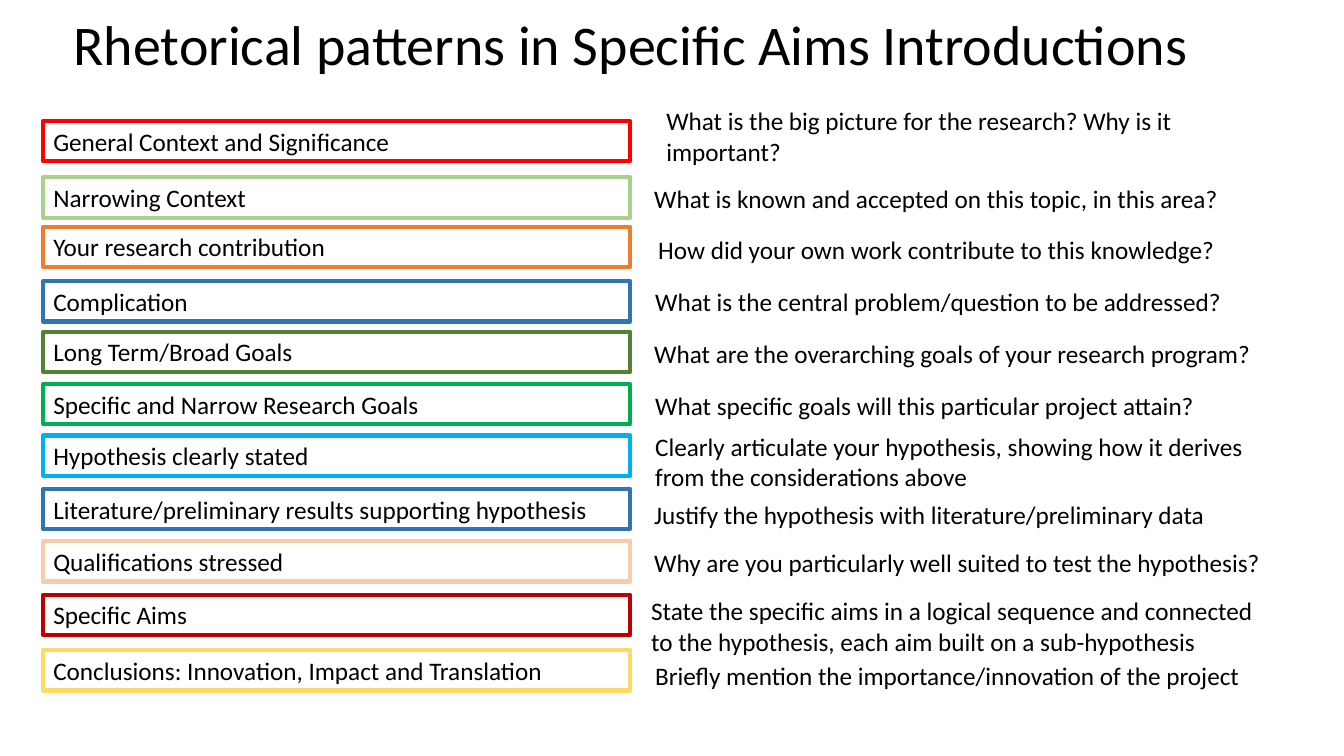
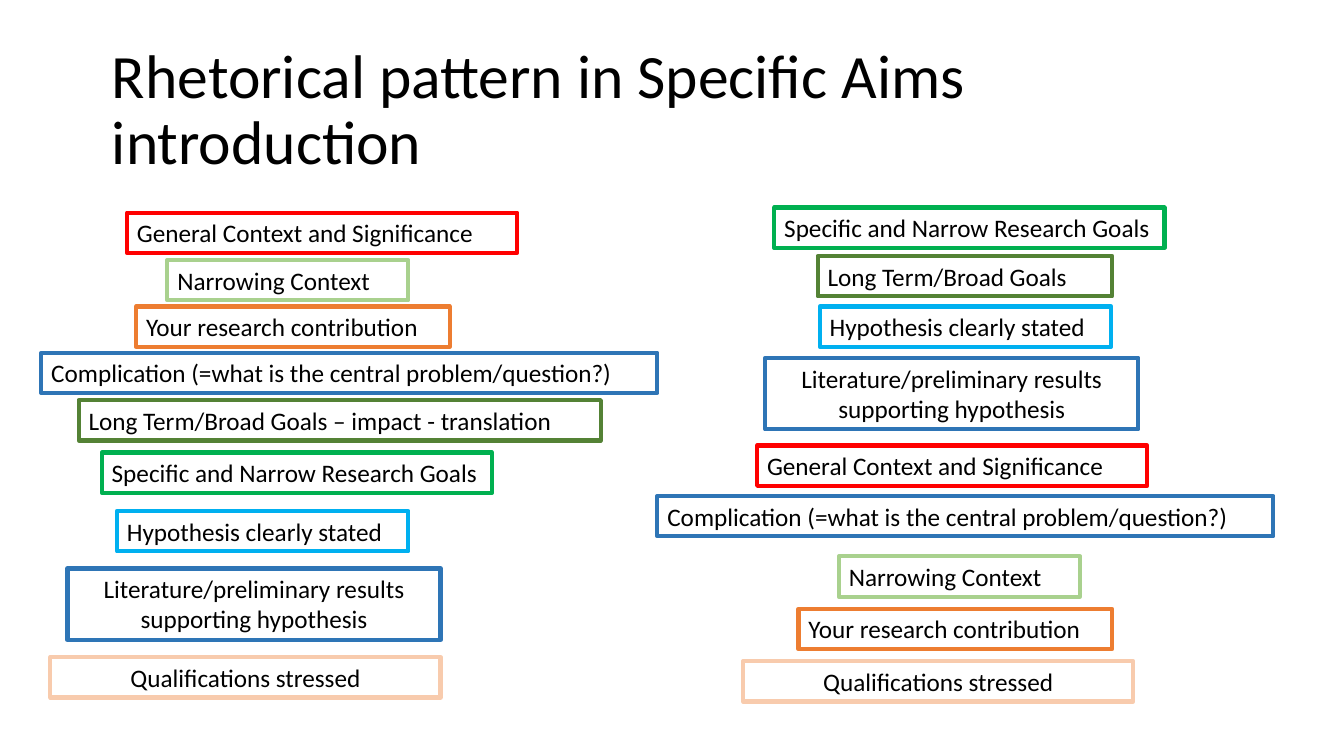
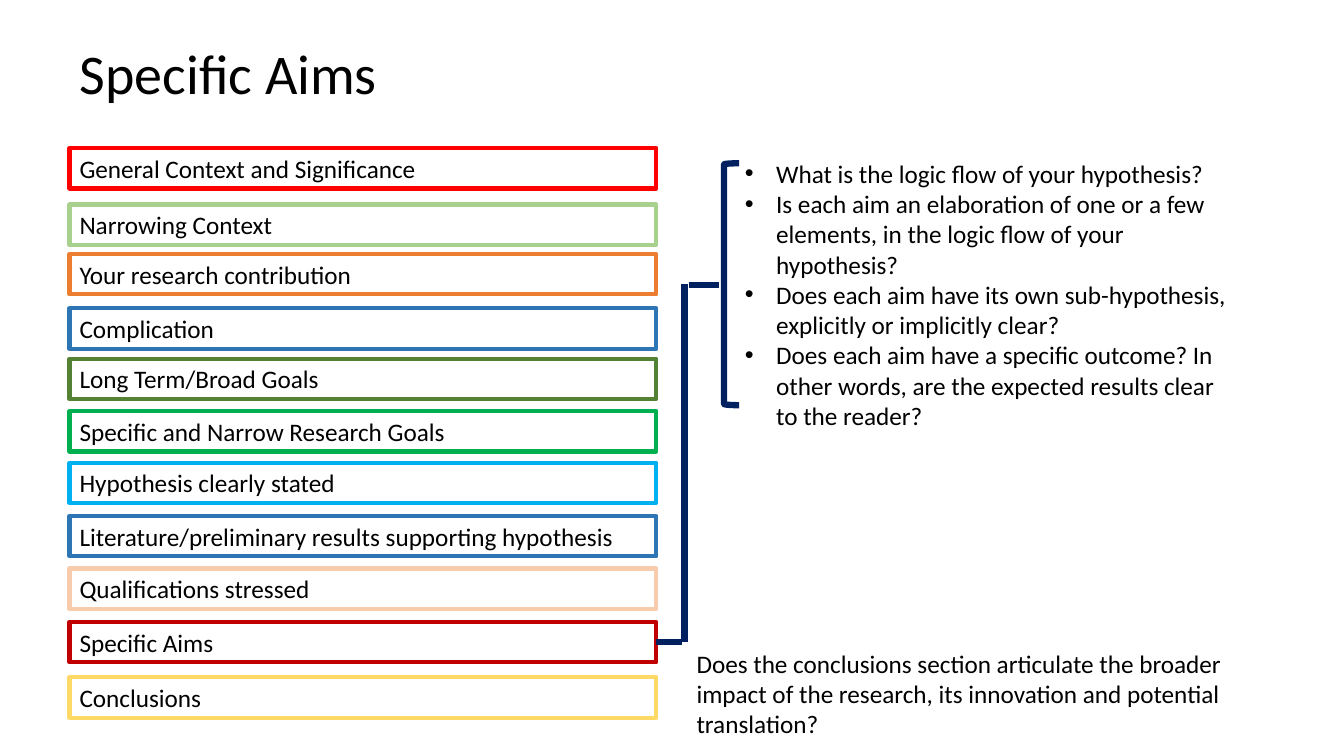
import dataclasses
import pptx
import pptx.dml.color
import pptx.enum.shapes
import pptx.enum.text
import pptx.oxml.ns
import pptx.util
from lxml import etree

Inches = pptx.util.Inches
Pt = pptx.util.Pt
RGB = pptx.dml.color.RGBColor.from_string
Shape = pptx.enum.shapes.MSO_SHAPE
Align = pptx.enum.text.PP_ALIGN
Anchor = pptx.enum.text.MSO_ANCHOR
Fit = pptx.enum.text.MSO_AUTO_SIZE
qn = pptx.oxml.ns.qn


@dataclasses.dataclass(frozen=True)
class Theme:
    font: str = "Calibri"
    ink: str = "000000"
    navy: str = "002060"
    body: int = 18
    title: int = 40
    large: int = 44
    edge: float = 3
    rule: float = 4.5
    row: float = 0.4
    tall: float = 0.71  # height of two lines of text


# Each move of the introduction: label and outline colour
MOVES = {
    "context": ("General Context and Significance", "FF0000"),
    "narrow": ("Narrowing Context", "A9D18E"),
    "work": ("Your research contribution", "ED7D31"),
    "problem": ("Complication", "2E75B6"),
    "broad": ("Long Term/Broad Goals", "548235"),
    "goals": ("Specific and Narrow Research Goals", "00B050"),
    "claim": ("Hypothesis clearly stated", "00B0F0"),
    "proof": ("Literature/preliminary results supporting hypothesis", "2E75B6"),
    "skills": ("Qualifications stressed", "F8CBAD"),
    "aims": ("Specific Aims", "C00000"),
    "end": ("Conclusions", "FFD966"),
}
TOPS = [1.2, 1.76, 2.25, 2.79, 3.29, 3.81, 4.32, 4.85, 5.37, 5.9, 6.45]


class Deck:
    def __init__(self, theme):
        self.theme = theme
        self.file = pptx.Presentation()
        self.file.slide_width = Inches(13.33)
        self.file.slide_height = Inches(7.5)
        self.slide = None

    def style(self, para, size, align=Align.LEFT):
        para.alignment = align
        para.font.name = self.theme.font
        para.font.size = Pt(size)
        para.font.color.rgb = RGB(self.theme.ink)

    def fill(self, frame, lines, align=Align.LEFT, wrap=True):
        frame.text = "\n".join(lines)
        frame.word_wrap = wrap
        frame.auto_size = Fit.SHAPE_TO_FIT_TEXT
        frame.vertical_anchor = Anchor.TOP
        for para in frame.paragraphs:
            self.style(para, self.theme.body, align)

    def page(self, text, left, top, size):
        """Start a slide with its title."""
        self.slide = self.file.slides.add_slide(self.file.slide_layouts[5])
        title = self.slide.shapes.title
        title.left, title.top = Inches(left), Inches(top)
        title.width, title.height = Inches(11.5), Inches(1.45)
        frame = title.text_frame
        frame.text = text
        frame.word_wrap = True
        frame.auto_size = Fit.NONE
        frame.vertical_anchor = Anchor.MIDDLE
        para = frame.paragraphs[0]
        para.line_spacing = 0.9
        self.style(para, size)

    def form(self, kind, left, top, width, height, color, weight):
        """Add an outlined shape without fill."""
        shape = self.slide.shapes.add_shape(
            kind, Inches(left), Inches(top), Inches(width), Inches(height))
        shape.shadow.inherit = False
        shape.fill.background()
        shape.line.color.rgb = RGB(color)
        shape.line.width = Pt(weight)
        return shape

    def box(self, move, left, top, width, height=None, label=None, align=Align.LEFT):
        text, color = MOVES[move]
        shape = self.form(Shape.RECTANGLE, left, top, width,
                          height or self.theme.row, color, self.theme.edge)
        self.fill(shape.text_frame, [label or text], align)
        return shape

    def stack(self, left, shift=0, labels=None):
        """Add all moves as one column of equal boxes."""
        labels = labels or {}
        return {move: self.box(move, left, top + shift, 5.82, label=labels.get(move))
                for move, top in zip(MOVES, TOPS)}

    def note(self, lines, left, top, width, height, wrap=True):
        shape = self.slide.shapes.add_textbox(
            Inches(left), Inches(top), Inches(width), Inches(height))
        self.fill(shape.text_frame, lines, wrap=wrap)
        return shape

    def list(self, lines, left, top, width, height):
        shape = self.note(lines, left, top, width, height)
        for para in shape.text_frame.paragraphs:
            props = para._p.get_or_add_pPr()
            props.set("marL", str(Inches(0.31)))
            props.set("indent", str(-Inches(0.31)))
            etree.SubElement(props, qn("a:buFont")).set("typeface", "Arial")
            etree.SubElement(props, qn("a:buChar")).set("char", "•")

    def line(self, x1, y1, x2, y2):
        link = self.slide.shapes.add_connector(
            pptx.enum.shapes.MSO_CONNECTOR.STRAIGHT,
            Inches(x1), Inches(y1), Inches(x2), Inches(y2))
        link.line.color.rgb = RGB(self.theme.navy)
        link.line.width = Pt(self.theme.rule)
        etree.SubElement(link._element.spPr, qn("a:effectLst"))
        return link


def guide(deck):
    """Moves on the left, the question each one answers on the right."""
    theme = deck.theme
    deck.page("Rhetorical patterns in Specific Aims Introductions", 0.63, -0.25, theme.title)
    deck.stack(0.43, labels={"end": "Conclusions: Innovation, Impact and Translation"})
    deck.note(["What is the big picture for the research? Why is it important?"],
              6.51, 1, 5.89, theme.tall)
    notes = [
        (6.39, 1.77, 5.86, ["What is known and accepted on this topic, in this area?"]),
        (6.43, 2.28, 5.78, ["How did your own work contribute to this knowledge?"]),
        (6.4, 2.79, 5.84, ["What is the central problem/question to be addressed?"]),
        (6.39, 3.31, 6.18, ["What are the overarching goals of your research program?"]),
        (6.4, 3.82, 5.61, ["What specific goals will this particular project attain?"]),
        (6.4, 4.23, 6.1, ["Clearly articulate your hypothesis, showing how it derives",
                          "from the considerations above"]),
        (6.39, 4.9, 5.78, ["Justify the hypothesis with literature/preliminary data"]),
        (6.39, 5.38, 6.28, ["Why are you particularly well suited to test the hypothesis?"]),
        (6.36, 5.86, 6.25, ["State the specific aims in a logical sequence and connected",
                            "to the hypothesis, each aim built on a sub-hypothesis"]),
        (6.4, 6.5, 6.07, ["Briefly mention the importance/innovation of the project"]),
    ]
    for left, top, width, lines in notes:
        height = theme.row if len(lines) == 1 else theme.tall
        deck.note(lines, left, top, width, height, wrap=False)


def orders(deck):
    """Two possible orders of the same moves."""
    theme = deck.theme
    deck.page("Rhetorical pattern in Specific Aims introduction", 1.01, 0.38, theme.large)
    wide = {"context": 3.87, "narrow": 2.39, "work": 3.11, "problem": 6.11,
            "broad": 2.92, "goals": 3.87, "claim": 2.89, "proof": 3.7, "skills": 3.87}
    first = {"context": (1.26, 2.11), "narrow": (1.66, 2.58), "work": (1.35, 3.04),
             "problem": (0.41, 3.5), "broad": (0.78, 3.97), "goals": (1.01, 4.49),
             "claim": (1.16, 5.07), "proof": (0.67, 5.64), "skills": (0.5, 6.52)}
    second = {"goals": (7.68, 2.06), "broad": (8.11, 2.54), "claim": (8.13, 3.04),
              "proof": (7.59, 3.55), "context": (7.51, 4.42), "problem": (6.52, 4.92),
              "narrow": (8.32, 5.52), "work": (7.92, 6.04), "skills": (7.37, 6.56)}
    query = {"problem": "Complication (=what is the central problem/question?)"}
    impact = {"broad": "Long Term/Broad Goals – impact - translation"}
    columns = [(first, wide | {"broad": 5.18}, query | impact), (second, wide, query)]
    for spots, widths, labels in columns:
        for move, (left, top) in spots.items():
            deck.box(move, left, top, widths[move],
                     theme.tall if move == "proof" else theme.row, labels.get(move),
                     Align.CENTER if move in ("proof", "skills") else Align.LEFT)


def checks(deck):
    """Questions to ask about the aims and the conclusions."""
    theme = deck.theme
    deck.page("Specific Aims", 0.69, 0.03, theme.title)
    boxes = deck.stack(0.69, 0.27)
    deck.list([
        "What is the logic flow of your hypothesis?",
        "Is each aim an elaboration of one or a few elements, in the logic flow of your hypothesis?",
        "Does each aim have its own sub-hypothesis, explicitly or implicitly clear?",
        "Does each aim have a specific outcome? In other words, are the expected results clear to the reader?",
    ], 7.29, 1.52, 5.06, 2.83)

    # Path from the aims box to the bracket
    deck.line(6.51, 6.37, 6.76, 6.37).begin_connect(boxes["aims"], 3)
    deck.line(6.79, 6.37, 6.79, 2.82)
    deck.line(6.83, 2.83, 7.13, 2.83)
    deck.form(Shape.LEFT_BRACKET, 7.18, 1.62, 0.15, 2.4, theme.navy, theme.rule)
    deck.note(["Does the conclusions section articulate the broader impact of the research, "
               "its innovation and potential translation?"], 6.81, 6.38, 5.51, 1.01)


def main():
    deck = Deck(Theme())
    guide(deck)
    orders(deck)
    checks(deck)
    deck.file.save("out.pptx")


if __name__ == "__main__":
    main()
